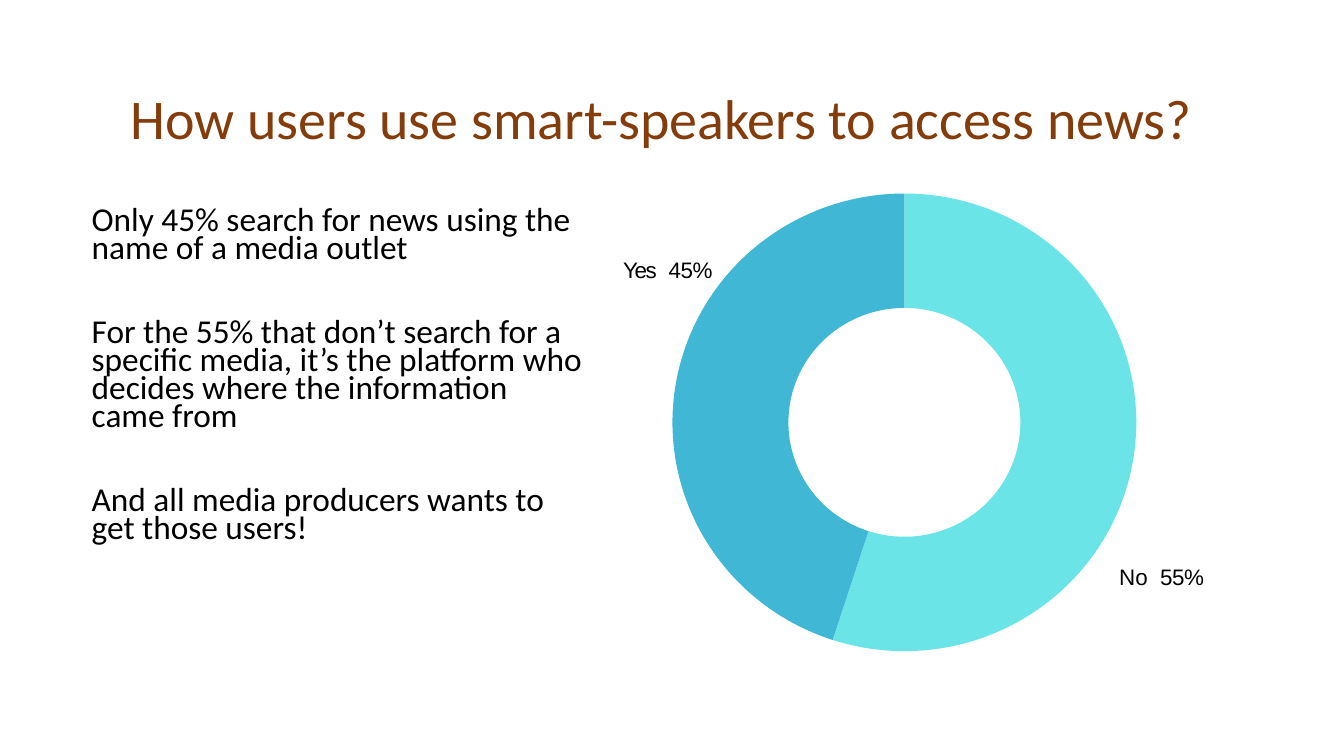
from dataclasses import dataclass
from math import cos, radians, sin

from lxml.etree import SubElement
from pptx import Presentation
from pptx.dml.color import RGBColor
from pptx.enum.text import MSO_ANCHOR as Anchor, MSO_AUTO_SIZE as AutoSize, PP_ALIGN as Align
from pptx.oxml.ns import qn
from pptx.util import Pt

EMU_PER_PX = 9144


@dataclass(frozen=True)
class Theme:
    """Colours, fonts and type sizes of the slide."""
    title_color: str = "843C0B"
    text_color: str = "000000"
    no_color: str = "6BE4E7"
    yes_color: str = "40B8D5"
    text_font: str = "Calibri"
    label_font: str = "Arial"
    title_size: float = 40
    body_size: float = 23.8
    label_size: float = 16


def px(length):
    """Turn px into EMU."""
    return round(length * EMU_PER_PX)


class SlideBuilder:
    """Places styled elements on one slide."""

    def __init__(self, slide, theme):
        """Keep the slide and its style."""
        self.slide = slide
        self.theme = theme

    def place(self, shape, left, top, width, height):
        """Move and size a shape."""
        shape.left, shape.top, shape.width, shape.height = map(px, (left, top, width, height))

    def style(self, paragraph, font_name, size, color, line_spacing):
        """Set the font and line spacing of a paragraph."""
        font = paragraph.font
        font.name, font.size = font_name, Pt(size)
        font.color.rgb = RGBColor.from_string(color)
        paragraph.line_spacing = line_spacing

    def title(self, text, *box):
        """Fill the title placeholder."""
        theme, shape = self.theme, self.slide.shapes.title
        self.place(shape, *box)
        frame = shape.text_frame
        frame.text = text
        frame.auto_size = AutoSize.NONE
        frame.vertical_anchor = Anchor.MIDDLE
        paragraph = frame.paragraphs[0]
        paragraph.alignment = Align.CENTER
        self.style(paragraph, theme.text_font, theme.title_size, theme.title_color, 0.9)

    def body(self, statements, *box):
        """Fill the body placeholder with unbulleted statements."""
        theme, shape = self.theme, self.slide.placeholders[1]
        self.place(shape, *box)
        frame = shape.text_frame
        frame.text = "\n".join(statements)
        frame.auto_size = AutoSize.NONE
        frame.vertical_anchor = Anchor.TOP
        for index, paragraph in enumerate(frame.paragraphs):
            paragraph.alignment = Align.LEFT
            self.style(paragraph, theme.text_font, theme.body_size, theme.text_color, 0.7)
            paragraph.space_before = Pt(40 if index else 10)
            properties = paragraph._p.get_or_add_pPr()
            properties.set("marL", "0")
            properties.set("indent", "0")
            SubElement(properties, qn("a:buNone"))

    def label(self, answer, share, tracking, inset, *box):
        """Add an answer and its share, with character spacing in hundredths of a point."""
        theme = self.theme
        frame = self.slide.shapes.add_textbox(*map(px, box)).text_frame
        frame.word_wrap = True
        frame.margin_left, frame.margin_top = px(inset), px(1)
        frame.margin_right = frame.margin_bottom = 0
        paragraph = frame.paragraphs[0]
        self.style(paragraph, theme.label_font, theme.label_size, theme.text_color, 1.15)
        for text, spacing in ((answer, tracking), (" ", 400), (share, -30)):
            run = paragraph.add_run()
            run.text = text
            run._r.get_or_add_rPr().set("spc", str(spacing))

    def ring_segment(self, start, end, color, center, radii):
        """Draw a ring segment between two clockwise angles from the top."""
        def point(angle, scale):
            x, y = (sin(radians(angle)), -cos(radians(angle)))
            return tuple(px(middle + radius * scale * part)
                         for middle, radius, part in zip(center, radii, (x, y)))

        outer = [point(angle, 1) for angle in range(start, end + 1)]
        inner = [point(angle, 0.5) for angle in range(end, start - 1, -1)]
        builder = self.slide.shapes.build_freeform(*outer[0])
        builder.add_line_segments(outer[1:] + inner, close=True)
        shape = builder.convert_to_shape()
        shape.shadow.inherit = False
        shape.fill.solid()
        shape.fill.fore_color.rgb = RGBColor.from_string(color)
        shape.line.fill.background()


def main():
    """Build and save the slide."""
    presentation = Presentation()
    presentation.slide_width, presentation.slide_height = px(1333), px(750)
    slide = presentation.slides.add_slide(presentation.slide_layouts[1])
    theme = Theme()
    builder = SlideBuilder(slide, theme)

    builder.title("How users use smart-speakers to access news?", 81, 48, 1150, 145)
    builder.body((
        "Only 45% search for news using the name of a media outlet",
        "For the 55% that don’t search for a specific media, it’s the platform who "
        "decides where the information came from",
        "And all media producers wants to get those users!",
    ), 81, 202, 506, 380)

    builder.label("No", "55%", 20, 8, 1102, 554, 207, 29)
    builder.label("Yes", "45%", -100, 5, 613, 249, 122, 29)

    no_end = round(360 * 0.55)
    for start, end, color in ((0, no_end, theme.no_color), (no_end, 360, theme.yes_color)):
        builder.ring_segment(start, end, color, center=(897, 419), radii=(230, 227))

    presentation.save("out.pptx")


if __name__ == "__main__":
    main()
